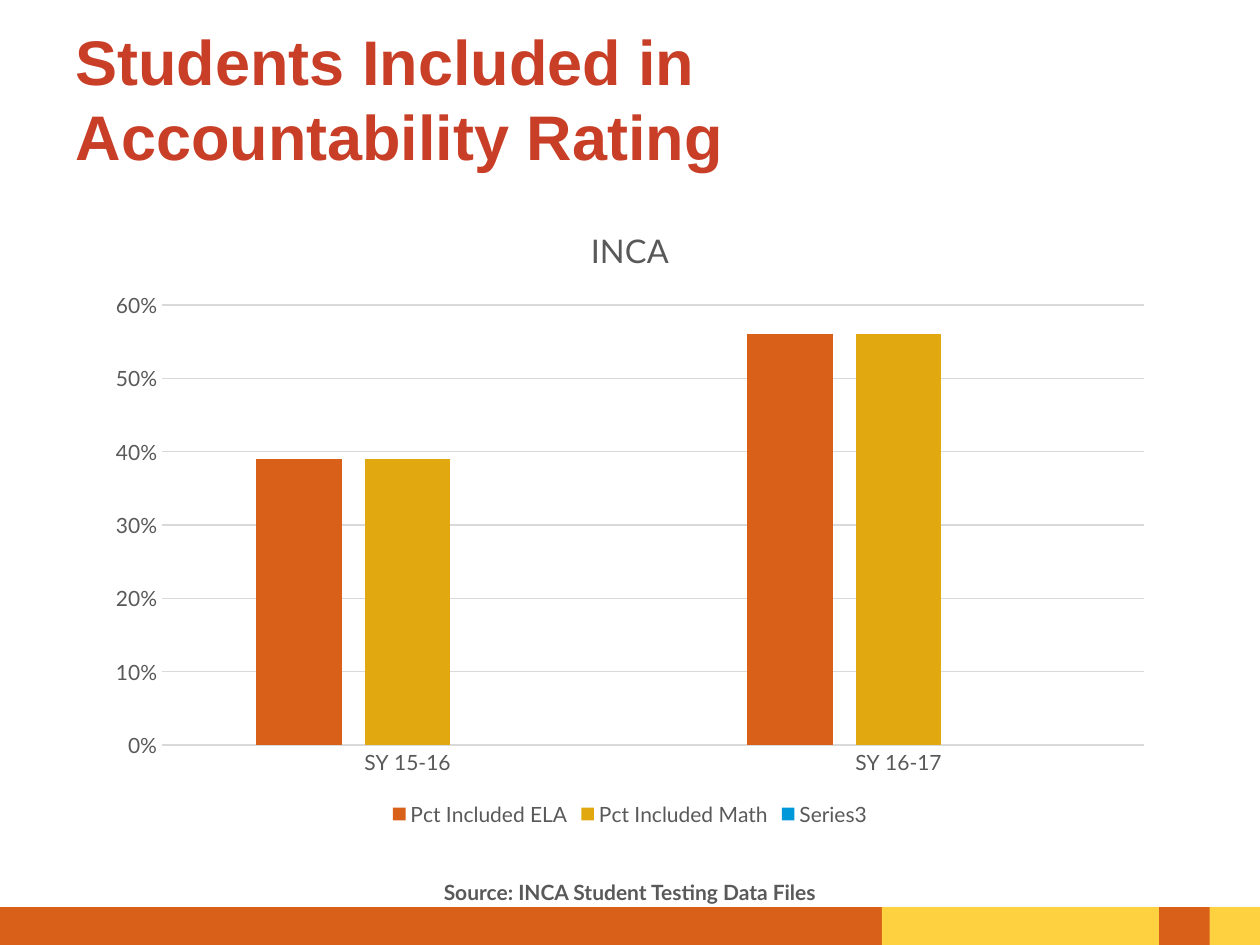
"""Build the slide on students included in the accountability rating."""
from pptx import Presentation
from pptx.chart.data import CategoryChartData
from pptx.dml.color import RGBColor
from pptx.enum.chart import XL_CHART_TYPE, XL_LEGEND_POSITION, XL_TICK_MARK
from pptx.enum.shapes import MSO_SHAPE
from pptx.enum.text import MSO_ANCHOR, MSO_AUTO_SIZE, PP_ALIGN
from pptx.util import Pt

COLUMN = XL_CHART_TYPE.COLUMN_CLUSTERED
BOTTOM = XL_LEGEND_POSITION.BOTTOM
NO_TICK = XL_TICK_MARK.NONE
RECT = MSO_SHAPE.RECTANGLE
PX = 9144
RUST, GOLD, GREY, RULE = "D86018", "FED141", "595959", "D9D9D9"


def rgb(code):
    return RGBColor.from_string(code)


def style(font, size, color, name="Lato", bold=False):
    values = {"size": Pt(size), "name": name, "bold": bold}
    for key, value in values.items():
        setattr(font, key, value)
    font.color.rgb = rgb(color)


deck = Presentation()
deck.slide_width, deck.slide_height = 1000 * PX, 750 * PX
slide = deck.slides.add_slide(deck.slide_layouts[5])
shapes = slide.shapes

for left, width, color in [(0, 700, RUST), (700, 300, GOLD), (920, 40, RUST)]:
    bar = shapes.add_shape(RECT, left * PX, 720 * PX, width * PX, 30 * PX)
    bar.shadow.inherit = False
    bar.fill.solid()
    bar.fill.fore_color.rgb = rgb(color)
    bar.line.fill.background()

title = shapes.title
place = {"left": 50, "top": 25, "width": 850, "height": 105}
for key, value in place.items():
    setattr(title, key, value * PX)

data = CategoryChartData(number_format="0%")
data.categories = ["SY 15-16", "SY 16-17"]
rows = [
    ("Pct Included ELA", (0.39, 0.56), RUST),
    ("Pct Included Math", (0.39, 0.56), "E1A810"),
    ("Series3", (None, None), "0098D8"),
]
for name, values, color in rows:
    data.add_series(name, values)
frame = shapes.add_chart(COLUMN, 75 * PX, 160 * PX, 850 * PX, 500 * PX, data)
chart = frame.chart
style(chart.font, 10, "000000")
chart.has_title = True
chart.chart_title.include_in_layout = False
head = chart.chart_title.text_frame
head.text = "INCA"
style(head.paragraphs[0].runs[0].font, 18.6, GREY)

plot = chart.plots[0]
plot.gap_width, plot.overlap = 219, -27
plot.vary_by_categories = False
for series, (name, values, color) in zip(plot.series, rows):
    series.format.fill.solid()
    series.format.fill.fore_color.rgb = rgb(color)

cat, val = chart.category_axis, chart.value_axis
for axis in (cat, val):
    axis.major_tick_mark = axis.minor_tick_mark = NO_TICK
    style(axis.tick_labels.font, 12, GREY)
scale = {"minimum_scale": 0, "maximum_scale": 0.6, "major_unit": 0.1}
for key, value in scale.items():
    setattr(val, key, value)
val.tick_labels.number_format = "0%"
val.tick_labels.number_format_is_linked = False
val.format.line.fill.background()
for line in (cat.format.line, val.major_gridlines.format.line):
    line.color.rgb = rgb(RULE)
    line.width = Pt(0.75)

chart.has_legend = True
chart.legend.position = BOTTOM
chart.legend.include_in_layout = False
style(chart.legend.font, 12, GREY)

note = shapes.add_textbox(75 * PX, 690 * PX, 850 * PX, 30 * PX)
texts = [
    (title, "Students Included in Accountability Rating", 0,
     MSO_ANCHOR.MIDDLE, PP_ALIGN.LEFT, (36, "C83E27", "Arial", True)),
    (note, "Source: INCA Student Testing Data Files", 2,
     MSO_ANCHOR.BOTTOM, PP_ALIGN.CENTER, (12, GREY, "Lato", True)),
]
for box, words, pad, anchor, align, look in texts:
    body = box.text_frame
    body.text = words
    values = {
        "word_wrap": True, "auto_size": MSO_AUTO_SIZE.NONE,
        "vertical_anchor": anchor,
        "margin_left": 10 * PX, "margin_right": 10 * PX,
        "margin_top": pad * PX, "margin_bottom": pad * PX,
    }
    for key, value in values.items():
        setattr(body, key, value)
    body.paragraphs[0].alignment = align
    style(body.paragraphs[0].runs[0].font, *look)

deck.save("out.pptx")
